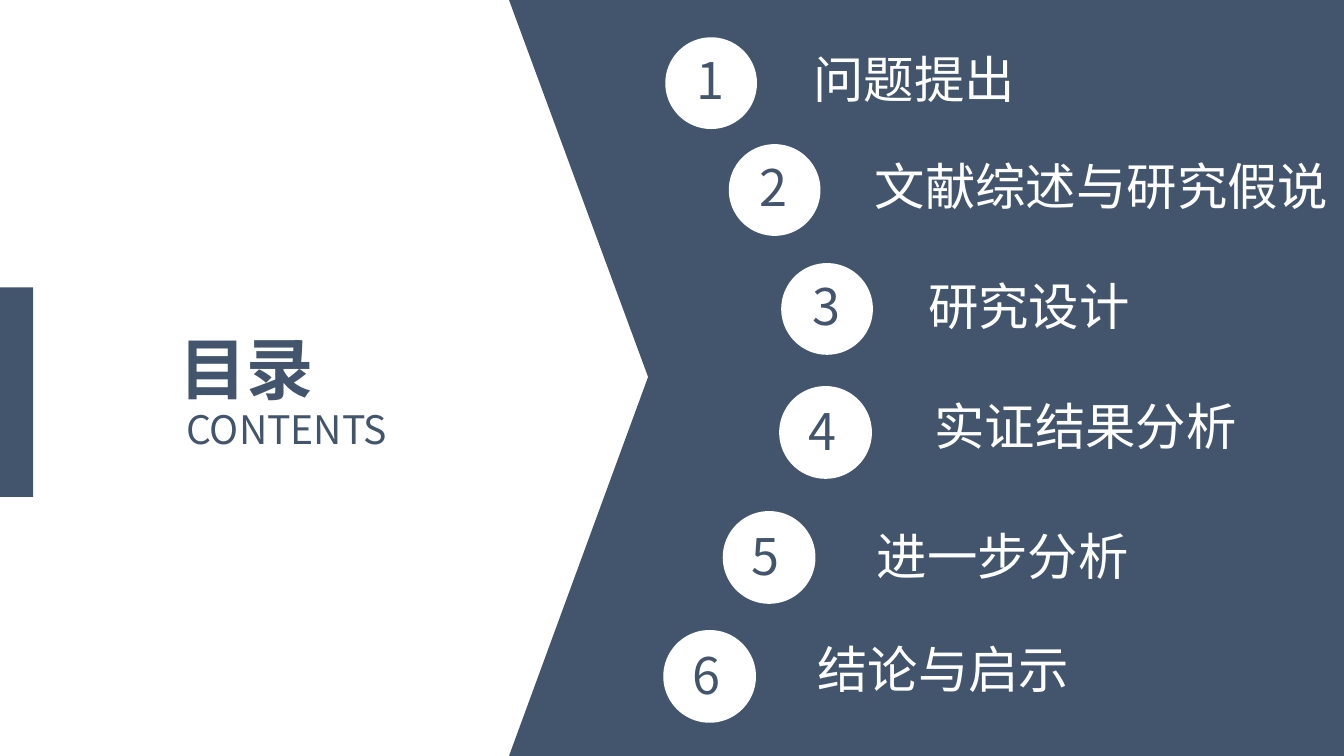
from lxml.etree import SubElement
from pptx import Presentation
from pptx.dml.color import RGBColor
from pptx.enum.shapes import MSO_SHAPE as Shape
from pptx.enum.text import MSO_ANCHOR as Anchor, MSO_AUTO_SIZE as Fit, PP_ALIGN as Align
from pptx.oxml.ns import qn
from pptx.util import Inches, Pt

NAVY = RGBColor(0x42, 0x55, 0x6C)
WHITE = RGBColor(0xFF, 0xFF, 0xFF)
FACE = "Noto Sans CJK SC"
COLS, ROWS = 40, 22.5

deck = Presentation()
deck.slide_width, deck.slide_height = Inches(COLS / 3), Inches(ROWS / 3)
slide = deck.slides.add_slide(deck.slide_layouts[5])
shapes = slide.shapes


def cells(*spans):
    """Turn counts of grid cells into lengths."""
    return [round(span * deck.slide_width / COLS) for span in spans]


def write(text, spot, size=36, color=WHITE, bold=False, align=Align.LEFT, box=None):
    """Set one line of text in the given box, or in a new text box."""
    box = box or shapes.add_textbox(0, 0, 0, 0)
    box.left, box.top, box.width, box.height = cells(*spot)
    frame = box.text_frame
    frame.word_wrap, frame.auto_size = True, Fit.NONE
    frame.vertical_anchor = Anchor.MIDDLE
    line = frame.paragraphs[0]
    line.alignment, line.line_spacing = align, 0.9
    run = line.add_run()
    run.text = text
    font = run.font
    font.name, font.size, font.bold = FACE, Pt(size), bold
    font.color.rgb = color
    SubElement(font._element, qn("a:ea"), typeface=FACE)


# Right panel with its notch, and the tab on the left edge
edge, tip, mid = 15.15, 19.29, 11.22
pen = shapes.build_freeform(*cells(edge, 0))
pen.add_line_segments([cells(*point) for point in (
    (COLS, 0), (COLS, ROWS), (edge, ROWS), (tip, mid))])
panel = pen.convert_to_shape()
tab = shapes.add_shape(Shape.RECTANGLE, *cells(0, 8.55, 0.99, 6.24))
plain = [(panel, NAVY), (tab, NAVY)]

# Heading
write("目录", (5.04, 9.72, 8.37, 2.73), size=48, color=NAVY, bold=True,
      align=Align.JUSTIFY, box=shapes.title)
write("CONTENTS", (5.25, 12, 7.98, 1.71), size=28, color=NAVY, align=Align.JUSTIFY)

# Topics: disc left and top, label left and top
topics = [
    ("问题提出", 19.8, 1.11, 23.91, 1.38),
    ("文献综述与研究假说", 21.69, 4.29, 25.74, 4.56),
    ("研究设计", 23.25, 7.83, 27.33, 8.13),
    ("实证结果分析", 23.19, 11.49, 27.51, 11.7),
    ("进一步分析", 21.51, 15.21, 25.8, 15.57),
    ("结论与启示", 19.74, 18.75, 24.03, 18.93),
]
tall = 2.13
for num, (topic, left, top, x, y) in enumerate(topics, 1):
    size, drop, inset = (2.73, 0.3, 0.63) if num < 4 else (2.76, 0.36, 0.57)
    disc = shapes.add_shape(Shape.OVAL, *cells(left, top, size, size))
    plain.append((disc, WHITE))
    write(topic, (x, y, 1.5 * len(topic) + 0.7, tall))
    write(str(num), (left + inset, top + drop, 1.56, tall), color=NAVY)

for shape, color in plain:
    shape.shadow.inherit = False
    shape.fill.solid()
    shape.fill.fore_color.rgb = color
    shape.line.fill.background()

deck.save("out.pptx")
